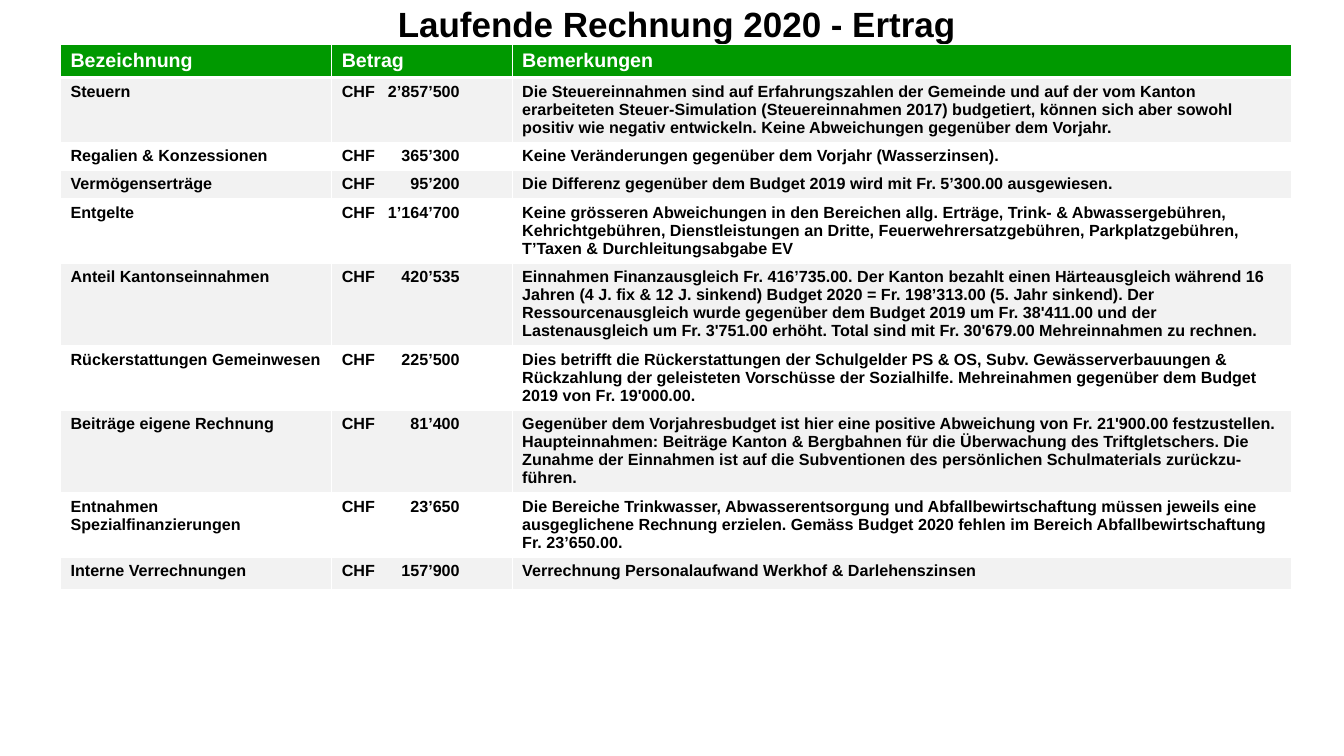
"""Build the slide with the revenue table of the 2020 current account."""
from dataclasses import dataclass

from lxml.etree import SubElement
from pptx import Presentation
from pptx.dml.color import RGBColor as Color
from pptx.enum.text import MSO_ANCHOR as Anchor, MSO_AUTO_SIZE as AutoSize, PP_ALIGN as Align
from pptx.oxml import parse_xml
from pptx.oxml.ns import nsdecls, qn
from pptx.util import Inches, Pt

TITLE = "Laufende Rechnung 2020 - Ertrag"
HEADINGS = ("Bezeichnung", "Betrag", "Bemerkungen")
ENTRIES = [
    ("Steuern", "2’857’500", 3,
     "Die Steuereinnahmen sind auf Erfahrungszahlen der Gemeinde und auf der vom Kanton "
     "erarbeiteten Steuer-Simulation (Steuereinnahmen 2017) budgetiert, können sich aber sowohl "
     "positiv wie negativ entwickeln. Keine Abweichungen gegenüber dem Vorjahr."),
    ("Regalien & Konzessionen", "365’300", 1,
     "Keine Veränderungen gegenüber dem Vorjahr (Wasserzinsen)."),
    ("Vermögenserträge", "95’200", 1,
     "Die Differenz gegenüber dem Budget 2019 wird mit Fr. 5’300.00 ausgewiesen."),
    ("Entgelte", "1’164’700", 3,
     "Keine grösseren Abweichungen in den Bereichen allg. Erträge, Trink- & Abwassergebühren, "
     "Kehrichtgebühren, Dienstleistungen an Dritte, Feuerwehrersatzgebühren, Parkplatzgebühren, "
     "T’Taxen & Durchleitungsabgabe EV"),
    ("Anteil Kantonseinnahmen", "420’535", 4,
     "Einnahmen Finanzausgleich Fr. 416’735.00. Der Kanton bezahlt einen Härteausgleich während 16 "
     "Jahren (4 J. fix & 12 J. sinkend) Budget 2020 = Fr. 198’313.00 (5. Jahr sinkend). Der "
     "Ressourcenausgleich wurde gegenüber dem Budget 2019 um Fr. 38'411.00 und der "
     "Lastenausgleich um Fr. 3'751.00 erhöht. Total sind mit Fr. 30'679.00 Mehreinnahmen zu rechnen."),
    ("Rückerstattungen Gemeinwesen", "225’500", 3,
     "Dies betrifft die Rückerstattungen der Schulgelder PS & OS, Subv. Gewässerverbauungen & "
     "Rückzahlung der geleisteten Vorschüsse der Sozialhilfe. Mehreinahmen gegenüber dem Budget "
     "2019 von Fr. 19'000.00."),
    ("Beiträge eigene Rechnung", "81’400", 4,
     "Gegenüber dem Vorjahresbudget ist hier eine positive Abweichung von Fr. 21'900.00 festzustellen. "
     "Haupteinnahmen: Beiträge Kanton & Bergbahnen für die Überwachung des Triftgletschers. Die "
     "Zunahme der Einnahmen ist auf die Subventionen des persönlichen Schulmaterials zurückzu-führen."),
    ("Entnahmen Spezialfinanzierungen", "23’650", 3,
     "Die Bereiche Trinkwasser, Abwasserentsorgung und Abfallbewirtschaftung müssen jeweils eine "
     "ausgeglichene Rechnung erzielen. Gemäss Budget 2020 fehlen im Bereich Abfallbewirtschaftung "
     "Fr. 23’650.00."),
    ("Interne Verrechnungen", "157’900", 1,
     "Verrechnung Personalaufwand Werkhof & Darlehenszinsen"),
]

SLIDE_SIZE = (13.33, 7.5)
TITLE_BOX = (1.71, -0.03, 10, 0.52)
TABLE_LEFT, TABLE_TOP = 0.6, 0.44
COLUMNS = (2.69, 1.79, 7.73)
HEADER_HEIGHT, LINE_HEIGHT, ROW_PADDING, LAST_ROW_HEIGHT = 0.33, 0.18, 0.1, 0.32
AMOUNT_TAB = 1.17


@dataclass(frozen=True)
class Theme:
    font: str = "Arial"
    green: str = "009900"
    grey: str = "F2F2F2"
    white: str = "FFFFFF"
    black: str = "000000"
    title_size: float = 25
    heading_size: float = 14
    body_size: float = 11.5
    border: float = 1
    header_border: float = 3


THEME = Theme()


def style_para(para, size, color):
    for span in para.runs:
        font = span.font
        font.name, font.size, font.bold = THEME.font, Pt(size), True
        font.color.rgb = Color.from_string(color)


def add_title(page):
    box = page.shapes.title
    box.left, box.top, box.width, box.height = map(Inches, TITLE_BOX)
    frame = box.text_frame
    frame.text = TITLE
    frame.word_wrap, frame.auto_size = True, AutoSize.NONE
    frame.vertical_anchor = Anchor.TOP
    frame.paragraphs[0].alignment = Align.CENTER
    style_para(frame.paragraphs[0], THEME.title_size, THEME.black)


def set_borders(cell, bottom):
    properties = cell._tc.get_or_add_tcPr()
    widths = {"lnL": THEME.border, "lnR": THEME.border, "lnT": THEME.border, "lnB": bottom}
    for place, (side, width) in enumerate(widths.items()):
        properties.insert(place, parse_xml(
            f'<a:{side} {nsdecls("a")} w="{Pt(width)}"><a:solidFill>'
            f'<a:srgbClr val="{THEME.white}"/></a:solidFill></a:{side}>'))


def fill_cell(cell, text, size, color, fill, bottom):
    cell.text = text
    cell.fill.solid()
    cell.fill.fore_color.rgb = Color.from_string(fill)
    set_borders(cell, bottom)
    para = cell.text_frame.paragraphs[0]
    style_para(para, size, color)
    if "\t" in text:
        tabs = SubElement(para._p.get_or_add_pPr(), qn("a:tabLst"))
        SubElement(tabs, qn("a:tab"), pos=str(Inches(AMOUNT_TAB)), algn="r")


def add_revenue_table(page):
    heights = [HEADER_HEIGHT] + [lines * LINE_HEIGHT + ROW_PADDING for _, _, lines, _ in ENTRIES]
    heights[-1] = LAST_ROW_HEIGHT
    table = page.shapes.add_table(
        len(heights), len(COLUMNS), Inches(TABLE_LEFT), Inches(TABLE_TOP),
        Inches(sum(COLUMNS)), Inches(sum(heights))).table
    table.horz_banding = False
    for column, width in zip(table.columns, COLUMNS):
        column.width = Inches(width)
    for row, height in zip(table.rows, heights):
        row.height = Inches(height)
    for cell, heading in zip(table.rows[0].cells, HEADINGS):
        fill_cell(cell, heading, THEME.heading_size, THEME.white, THEME.green, THEME.header_border)
    for number, (name, amount, _, remark) in enumerate(ENTRIES, 1):
        fill = THEME.grey if number % 2 else THEME.white
        for cell, text in zip(table.rows[number].cells, (name, f"CHF\t{amount}", remark)):
            fill_cell(cell, text, THEME.body_size, THEME.black, fill, THEME.border)


def main():
    deck = Presentation()
    deck.slide_width, deck.slide_height = map(Inches, SLIDE_SIZE)
    page = deck.slides.add_slide(deck.slide_layouts[5])
    add_revenue_table(page)
    add_title(page)
    deck.save("out.pptx")


if __name__ == "__main__":
    main()
